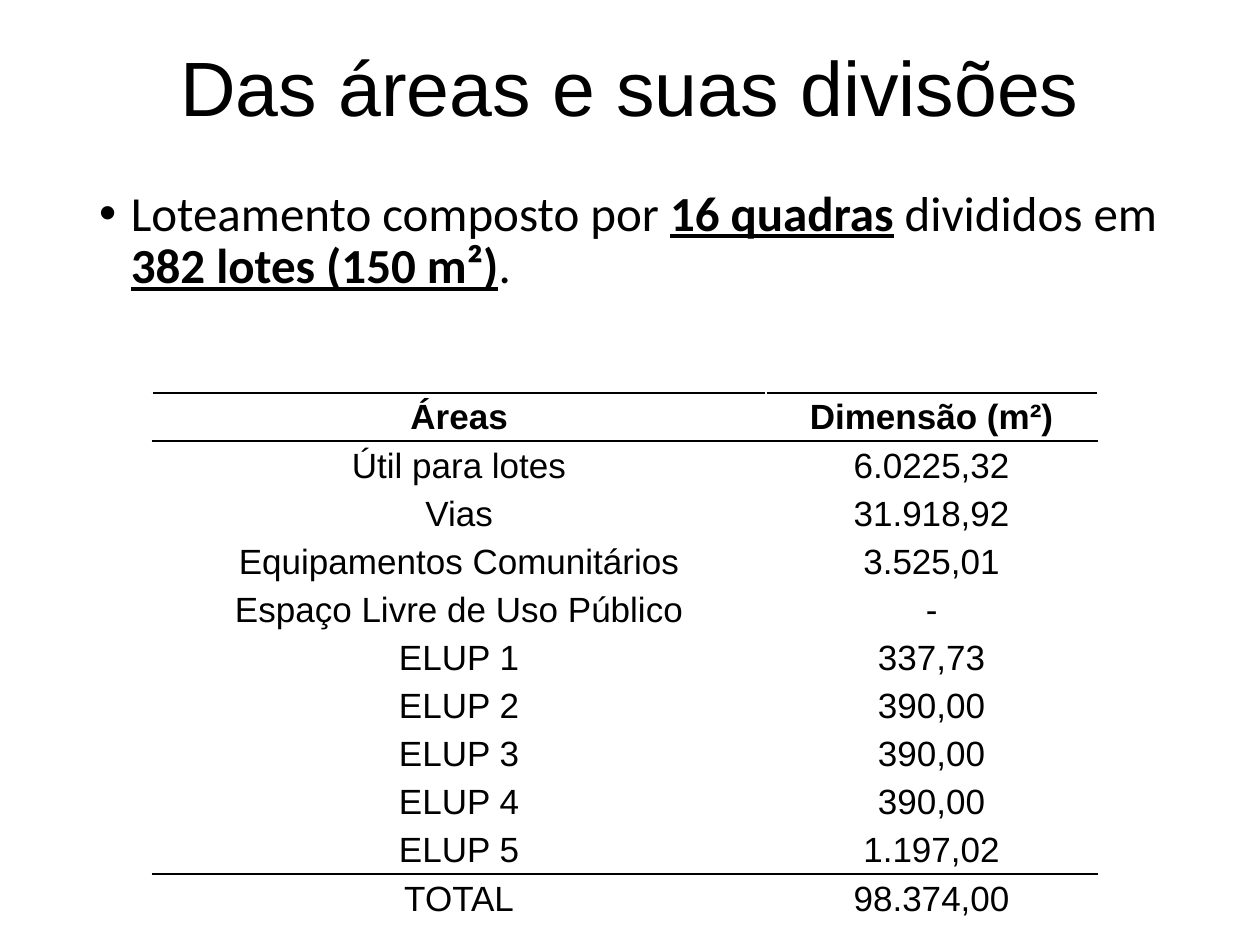
import pptx
import pptx.dml.color
import pptx.enum.text
import pptx.oxml
import pptx.oxml.ns
import pptx.util
from pptx.util import Cm

COLORS = {"ink": "000000", "paper": "FFFFFF"}
FONTS = {"heading": "Arial", "body": "Calibri"}
AREAS = [
    ("Áreas", "Dimensão (m²)"),
    ("Útil para lotes", "6.0225,32"),
    ("Vias", "31.918,92"),
    ("Equipamentos Comunitários", "3.525,01"),
    ("Espaço Livre de Uso Público", "-"),
    ("ELUP 1", "337,73"),
    ("ELUP 2", "390,00"),
    ("ELUP 3", "390,00"),
    ("ELUP 4", "390,00"),
    ("ELUP 5", "1.197,02"),
    ("TOTAL", "98.374,00"),
]
SUMMARY = [
    ("Loteamento composto por ", False),
    ("16 quadras", True),
    (" divididos em ", False),
    ("382 lotes (150 m²)", True),
    (".", False),
]


class SlideBuilder:
    def __init__(self, page):
        self.page = page
        page.background.fill.solid()
        page.background.fill.fore_color.rgb = self.color("paper")

    def color(self, name):
        return pptx.dml.color.RGBColor.from_string(COLORS[name])

    def style(self, para, font, size, bold=None):
        para.font.name = FONTS[font]
        para.font.size = pptx.util.Pt(size)
        para.font.bold = bold
        para.font.color.rgb = self.color("ink")

    def text_box(self, left, top, width, height):
        box = self.page.shapes.add_textbox(Cm(left), Cm(top), Cm(width), Cm(height))
        box.text_frame.word_wrap = True
        para = box.text_frame.paragraphs[0]
        para.line_spacing = 0.9
        return box, para

    def title(self, text, *place):
        box, para = self.text_box(*place)
        box.text_frame.vertical_anchor = pptx.enum.text.MSO_ANCHOR.MIDDLE
        para.text = text
        para.alignment = pptx.enum.text.PP_ALIGN.CENTER
        self.style(para, "heading", 44)

    def bullet(self, pieces, *place):
        box, para = self.text_box(*place)
        para.space_before = pptx.util.Pt(10)
        self.style(para, "body", 28)
        for text, strong in pieces:
            span = para.add_run()
            span.text = text
            if strong:
                span.font.bold = True
                span.font.underline = True
        properties = para._p.get_or_add_pPr()
        indent = Cm(0.64)
        properties.set("marL", str(indent))
        properties.set("indent", str(-indent))
        namespace = pptx.oxml.ns.nsdecls("a")
        marks = [
            f'<a:buFont {namespace} typeface="Arial"/>',
            f'<a:buChar {namespace} char="•"/>',
        ]
        for position, mark in enumerate(marks, 2):
            properties.insert(position, pptx.oxml.parse_xml(mark))

    def border(self, cell, sides):
        properties = cell._tc.get_or_add_tcPr()
        for position, side in enumerate(sides):
            line = pptx.oxml.parse_xml(
                f'<a:ln{side} {pptx.oxml.ns.nsdecls("a")} w="{pptx.util.Pt(1)}">'
                f'<a:solidFill><a:srgbClr val="{COLORS["ink"]}"/></a:solidFill>'
                f'</a:ln{side}>'
            )
            properties.insert(position, line)

    def table(self, rows, widths, row_height, left, top):
        frame = self.page.shapes.add_table(
            len(rows), len(widths), Cm(left), Cm(top),
            Cm(sum(widths)), Cm(row_height * len(rows)),
        )
        table = frame.table
        table.first_row = False
        table.horz_banding = False
        for column, width in zip(table.columns, widths):
            column.width = Cm(width)
        last = len(rows) - 1
        ruled_edges = {0, 1, last}
        for row_index, values in enumerate(rows):
            table.rows[row_index].height = Cm(row_height)
            sides = [
                side for side, edge in (("T", row_index), ("B", row_index + 1))
                if edge in ruled_edges
            ]
            for column_index, value in enumerate(values):
                cell = table.cell(row_index, column_index)
                cell.fill.background()
                cell.margin_left = cell.margin_right = cell.margin_top = Cm(0.03)
                cell.margin_bottom = 0
                cell.vertical_anchor = pptx.enum.text.MSO_ANCHOR.MIDDLE
                para = cell.text_frame.paragraphs[0]
                para.text = value
                para.alignment = pptx.enum.text.PP_ALIGN.CENTER
                self.style(para, "heading", 20, row_index == 0)
                self.border(cell, sides)


def main():
    deck = pptx.Presentation()
    deck.slide_width, deck.slide_height = Cm(25.4), Cm(19.05)
    builder = SlideBuilder(deck.slides.add_slide(deck.slide_layouts[6]))
    builder.title("Das áreas e suas divisões", 1.75, 0, 21.9, 3.68)
    builder.bullet(SUMMARY, 1.75, 3.68, 21.9, 2.46)
    builder.table(AREAS, [12.37, 6.68], 0.97, 3.07, 7.92)
    deck.save("out.pptx")


if __name__ == "__main__":
    main()
